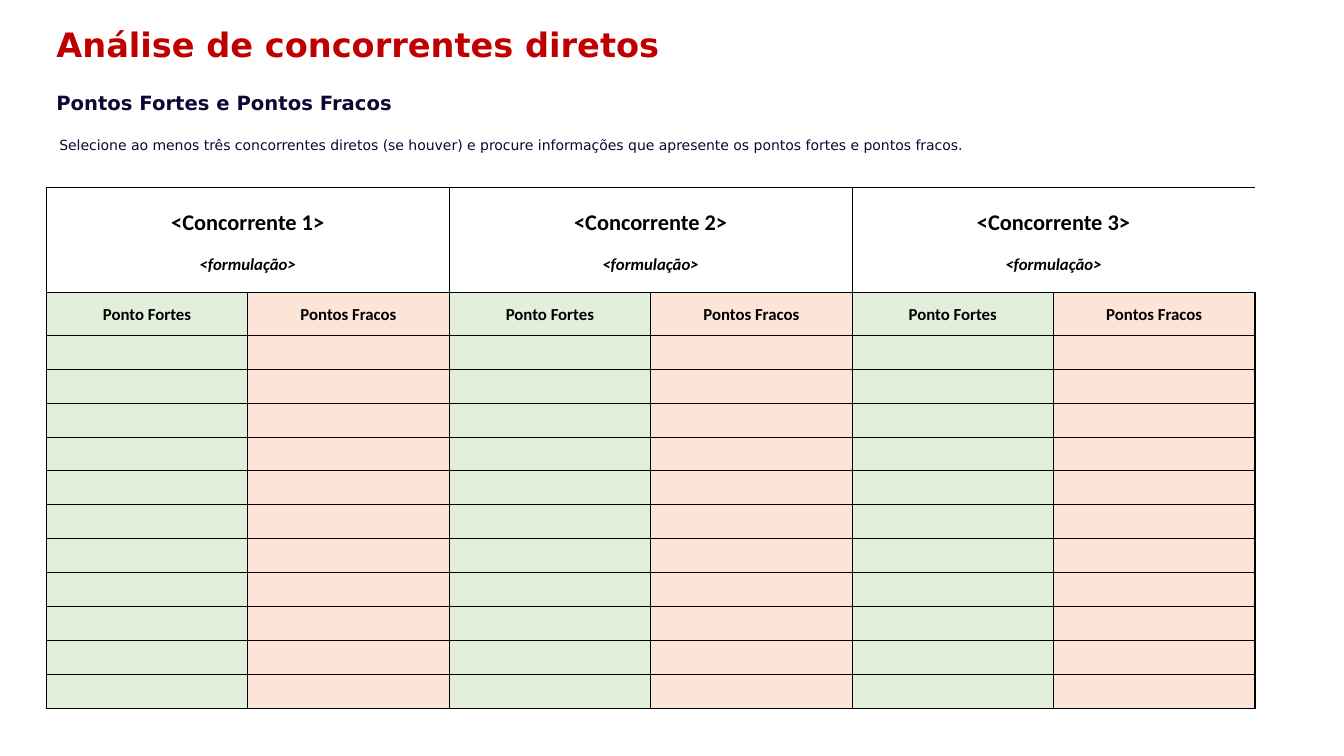
from lxml import etree
from pptx import Presentation
from pptx import util as u
from pptx.dml.color import RGBColor
from pptx.enum import text
from pptx.oxml import ns

HEADINGS = [
    ("Análise de concorrentes diretos", "title", (40.3, 1.4, 864, 44.6), 0),
    ("Pontos Fortes e Pontos Fracos", "subtitle", (33.1, 63.3, 877.7, 21.7), 7.2),
    ("Selecione ao menos três concorrentes diretos (se houver) e procure informações "
     "que apresente os pontos fortes e pontos fracos.", "guide", (35.3, 95, 751, 18), 7.2),
]
COMPETITORS = ["<Concorrente 1>", "<Concorrente 2>", "<Concorrente 3>"]
FORMULATION = "<formulação>"
ASPECTS = ["Ponto Fortes", "Pontos Fracos"]
BLANK_ROWS = 11

THEME = {
    "title": dict(name="DejaVu Sans", size=24, color="C00000", bold=True),
    "subtitle": dict(name="DejaVu Sans", size=14, color="0E0733", bold=True),
    "guide": dict(name="DejaVu Sans", size=10, color="0E0733", bold=False),
    "competitor": dict(name="Calibri", size=16, color="000000", bold=True),
    "formulation": dict(name="Calibri", size=12, color="000000", bold=True, italic=True),
    "aspect": dict(name="Calibri", size=12, color="000000", bold=True),
    "aspect_fills": ["E2EFDA", "FCE4D6"],
    "border": "000000",
    "thin": 0.5,
    "thick": 1,
}
TABLE_LEFT, TABLE_TOP, COLUMN_WIDTH = 33.1, 133.9, 143.9
ROW_HEIGHTS = [35.2, 40, 30.5] + [24.2] * (BLANK_ROWS - 1) + [25]


def style(para, role):
    look = THEME[role]
    font = para.font
    font.name, font.size = look["name"], u.Pt(look["size"])
    font.bold, font.italic = look["bold"], look.get("italic", False)
    font.color.rgb = RGBColor.from_string(look["color"])


def add_heading(page, words, role, frame, inset):
    box = page.shapes.add_textbox(*map(u.Pt, frame))
    frame = box.text_frame
    frame.word_wrap = True
    frame.vertical_anchor = text.MSO_ANCHOR.BOTTOM
    frame.margin_left = frame.margin_right = u.Pt(inset)
    frame.margin_top = frame.margin_bottom = u.Pt(inset / 2)
    para = frame.paragraphs[0]
    para.text = words
    if role != "title":
        para.line_spacing = 0.85
    style(para, role)


def set_borders(cell, widths):
    properties = cell._tc.get_or_add_tcPr()
    for index, (side, width) in enumerate(zip("LRTB", widths)):
        line = etree.Element(ns.qn(f"a:ln{side}"), w=str(u.Pt(width)))
        if width:
            fill = etree.SubElement(line, ns.qn("a:solidFill"))
            etree.SubElement(fill, ns.qn("a:srgbClr"), val=THEME["border"])
        else:
            etree.SubElement(line, ns.qn("a:noFill"))
        properties.insert(index, line)


def cell_borders(row, side):
    thin, thick = THEME["thin"], THEME["thick"]
    inner = 0 if row < 2 else thin
    left, right = (thick, inner) if side == 0 else (inner, thick)
    top = {0: thick, 1: 0}.get(row, thin)
    bottom = {0: 0, len(ROW_HEIGHTS) - 1: thick}.get(row, thin)
    return left, right, top, bottom


def cell_content(row, column):
    pair, side = divmod(column, 2)
    if row == 2:
        return ASPECTS[side], "aspect"
    if row < 2 and side == 0:
        return [(COMPETITORS[pair], "competitor"), (FORMULATION, "formulation")][row]
    return None


def fill_cell(cell, row, column):
    side = column % 2
    cell.margin_left = cell.margin_right = cell.margin_top = u.Pt(0.7)
    cell.margin_bottom = 0
    cell.vertical_anchor = text.MSO_ANCHOR.MIDDLE if row else text.MSO_ANCHOR.BOTTOM
    if row < 2:
        cell.fill.background()
    else:
        cell.fill.solid()
        cell.fill.fore_color.rgb = RGBColor.from_string(THEME["aspect_fills"][side])
    set_borders(cell, cell_borders(row, side))
    content = cell_content(row, column)
    if content:
        words, role = content
        para = cell.text_frame.paragraphs[0]
        para.text = words
        para.alignment = text.PP_ALIGN.CENTER
        style(para, role)


def add_comparison(page):
    columns = len(COMPETITORS) * len(ASPECTS)
    table = page.shapes.add_table(
        len(ROW_HEIGHTS), columns, u.Pt(TABLE_LEFT), u.Pt(TABLE_TOP),
        u.Pt(COLUMN_WIDTH * columns), u.Pt(sum(ROW_HEIGHTS))).table
    table.first_row = table.horz_banding = False
    for column in table.columns:
        column.width = u.Pt(COLUMN_WIDTH)
    for row, height in enumerate(ROW_HEIGHTS):
        table.rows[row].height = u.Pt(height)
        for column in range(columns):
            fill_cell(table.cell(row, column), row, column)
    for row in range(2):
        for column in range(0, columns, 2):
            table.cell(row, column).merge(table.cell(row, column + 1))


def main():
    deck = Presentation()
    deck.slide_width, deck.slide_height = u.Pt(960), u.Pt(540)
    page = deck.slides.add_slide(deck.slide_layouts[6])
    for heading in HEADINGS:
        add_heading(page, *heading)
    add_comparison(page)
    deck.save("out.pptx")


if __name__ == "__main__":
    main()
